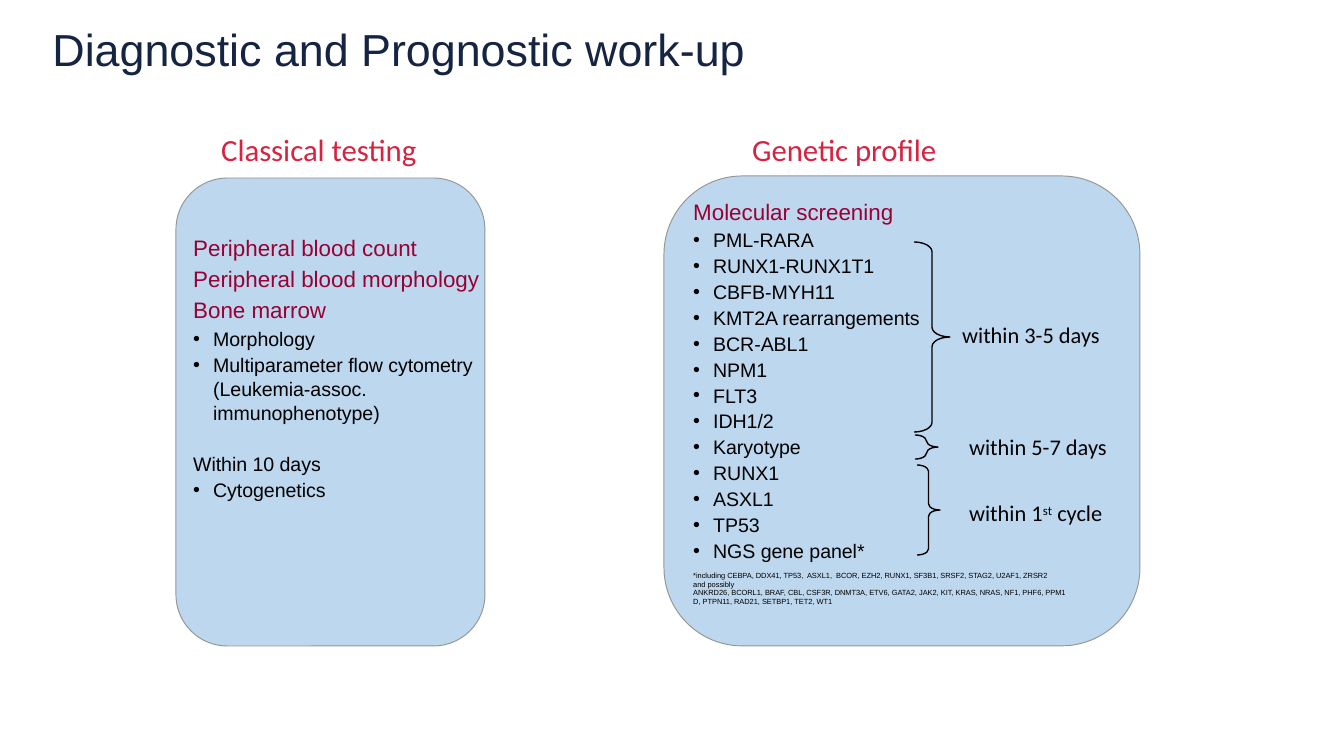
from lxml import etree
from pptx import Presentation
from pptx import util as u
from pptx.dml.color import RGBColor
from pptx.enum import shapes, text
from pptx.oxml.ns import qn

EMU_PER_PX = 914400 / 134.4
COLORS = {
    "title": "152442",
    "heading": "D72240",
    "topic": "990033",
    "body": "000000",
    "panel": "BDD7EE",
    "border": "969696",
}
LEADING = 1.04
INDENT = 20


def px(length):
    return u.Emu(round(length * EMU_PER_PX))


def color(name):
    return RGBColor.from_string(COLORS[name])


class SlideBuilder:
    def __init__(self, slide):
        self.slide = slide

    def style(self, paragraph, size, ink, font):
        paragraph.font.size = u.Pt(size)
        paragraph.font.name = font
        paragraph.font.color.rgb = color(ink)

    def title(self, wording, left, top, width, height):
        title = self.slide.shapes.title
        title.left, title.top = px(left), px(top)
        title.width, title.height = px(width), px(height)
        frame = title.text_frame
        frame.text = wording
        frame.vertical_anchor = text.MSO_ANCHOR.MIDDLE
        frame.paragraphs[0].alignment = text.PP_ALIGN.LEFT
        self.style(frame.paragraphs[0], 24, "title", "Arial")

    def text_frame(self, left, top, width, height):
        box = self.slide.shapes.add_textbox(px(left), px(top), px(width), px(height))
        box.text_frame.word_wrap = True
        return box.text_frame

    def label(self, wording, left, top, width, height, size=12, ink="body"):
        paragraph = self.text_frame(left, top, width, height).paragraphs[0]
        paragraph.text = wording
        self.style(paragraph, size, ink, "Calibri")
        return paragraph

    def panel(self, left, top, width, height):
        panel = self.slide.shapes.add_shape(
            shapes.MSO_SHAPE.ROUNDED_RECTANGLE, px(left), px(top), px(width), px(height))
        panel.shadow.inherit = False
        panel.fill.solid()
        panel.fill.fore_color.rgb = color("panel")
        panel.line.color.rgb = color("border")
        panel.line.width = u.Pt(0.5)

    def brace(self, left, top, width, height):
        brace = self.slide.shapes.add_shape(
            shapes.MSO_SHAPE.LEFT_BRACE, px(left), px(top), px(width), px(height))
        brace.rotation = 180
        brace.adjustments[0] = 0.27
        brace.shadow.inherit = False
        brace.fill.background()
        brace.line.color.rgb = color("body")
        brace.line.width = u.Pt(0.75)

    def add_paragraph(self, frame, wording, size=10.5, ink="body", bullet=False,
                      before=0, after=0.8, leading=LEADING):
        paragraph = frame.paragraphs[0]
        if paragraph.text:
            paragraph = frame.add_paragraph()
        paragraph.text = wording
        paragraph.line_spacing = leading
        paragraph.space_after = u.Pt(after)
        if before:
            paragraph.space_before = u.Pt(before)
        if bullet:
            properties = paragraph._p.get_or_add_pPr()
            properties.set("marL", str(px(INDENT)))
            properties.set("indent", str(-px(INDENT)))
            etree.SubElement(properties, qn("a:buFont")).set("typeface", "Arial")
            etree.SubElement(properties, qn("a:buChar")).set("char", "•")
        self.style(paragraph, size, ink, "Arial")

    def topic(self, frame, wording):
        self.add_paragraph(frame, wording, size=12, ink="topic", after=1.5)

    def bullets(self, frame, items):
        for item in items:
            self.add_paragraph(frame, item, bullet=True)

    def footnote(self, frame, wording, before=0):
        self.add_paragraph(frame, wording, size=4, before=before, after=0, leading=1.0)


def unbroken(genes):
    """Join gene names so that no line break falls at the spaces."""
    return ("," + chr(160)).join(genes.split())


def add_classical_testing(builder):
    builder.panel(176, 178, 309, 468)
    builder.label("Classical testing", 208, 124, 336, 51, 16.5, "heading")
    tests = builder.text_frame(180, 227, 316, 331)
    for topic in ("Peripheral blood count", "Peripheral blood morphology", "Bone marrow"):
        builder.topic(tests, topic)
    builder.bullets(tests, [
        "Morphology",
        "Multiparameter flow cytometry (Leukemia-assoc. immunophenotype)"])
    builder.add_paragraph(tests, "Within 10 days", before=13.4)
    builder.bullets(tests, ["Cytogenetics"])


def add_genetic_profile(builder):
    builder.panel(664, 176, 476, 470)
    builder.label("Genetic profile", 739, 124, 446, 51, 16.5, "heading")
    screening = builder.text_frame(680, 190, 402, 431)
    builder.topic(screening, "Molecular screening")
    builder.bullets(screening, [
        "PML-RARA", "RUNX1-RUNX1T1", "CBFB-MYH11", "KMT2A rearrangements",
        "BCR-ABL1", "NPM1", "FLT3", "IDH1/2", "Karyotype", "RUNX1", "ASXL1",
        "TP53", "NGS gene panel*"])
    gap = chr(160) + " "
    builder.footnote(
        screening,
        f"*including CEBPA, DDX41, TP53,{gap}ASXL1,{gap}"
        + unbroken("BCOR EZH2 RUNX1 SF3B1 SRSF2 STAG2 U2AF1 ZRSR2"), before=3.7)
    builder.footnote(
        screening,
        "and possibly " + unbroken(
            "ANKRD26 BCORL1 BRAF CBL CSF3R DNMT3A ETV6 GATA2 JAK2 KIT KRAS "
            "NRAS NF1 PHF6 PPM1D PTPN11 RAD21 SETBP1 TET2 WT1"))

    builder.brace(914, 242, 36, 190)
    builder.label("within 3-5 days", 949, 315, 180, 40)
    builder.brace(915, 435, 23, 24)
    builder.label("within 5-7 days", 956, 427, 203, 40)
    builder.brace(917, 465, 23, 90)
    first_cycle = builder.label("within 1", 956, 493, 203, 40)
    ordinal = first_cycle.add_run()
    ordinal.text = "st"
    ordinal._r.get_or_add_rPr().set("baseline", "30000")
    first_cycle.add_run().text = " cycle"


def main():
    deck = Presentation()
    deck.slide_width, deck.slide_height = px(1344), px(756)
    builder = SlideBuilder(deck.slides.add_slide(deck.slide_layouts[5]))
    builder.title("Diagnostic and Prognostic work-up", 39, 19, 1017, 59)
    add_classical_testing(builder)
    add_genetic_profile(builder)
    deck.save("out.pptx")


if __name__ == "__main__":
    main()
